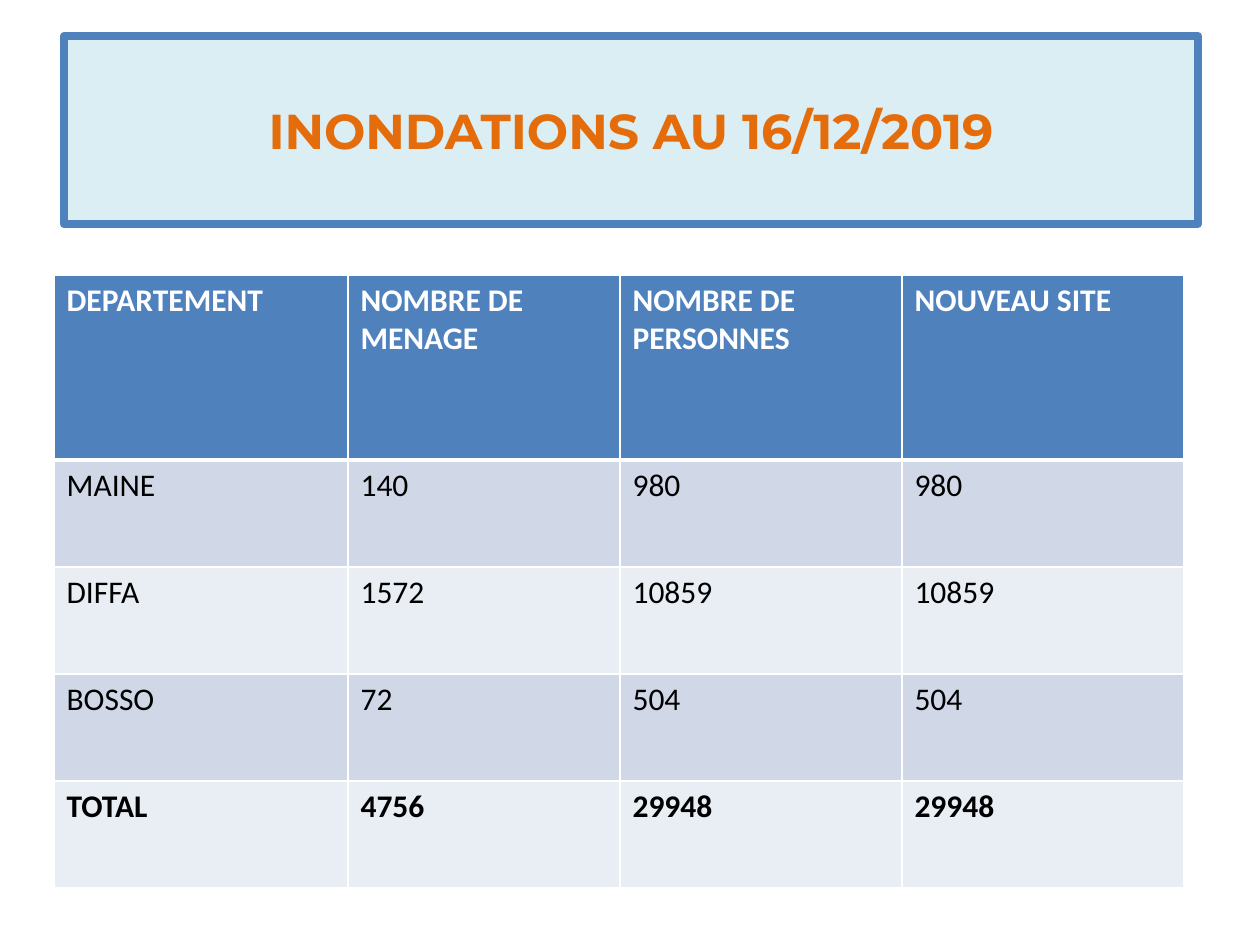
from dataclasses import dataclass

from lxml.etree import SubElement
from pptx import Presentation
from pptx.dml.color import RGBColor as RGB
from pptx.enum.text import MSO_ANCHOR as Anchor, PP_ALIGN as Align
from pptx.oxml.ns import qn
from pptx.util import Emu, Pt

PX_PER_INCH = 126


@dataclass(frozen=True)
class Theme:
    blue: str = "4F81BD"
    pale_blue: str = "DBEEF4"
    orange: str = "E46C0A"
    white: str = "FFFFFF"
    black: str = "000000"
    bands: tuple[str, str] = ("D0D8E8", "E9EDF4")
    title_font: str = "Montserrat"
    body_font: str = "Calibri"
    title_size: int = 28
    body_size: int = 18
    frame_width: float = 4.5
    grid_width: int = 1
    header_rule: int = 3


@dataclass(frozen=True)
class RowStyle:
    fill: str
    color: str
    bold: bool
    top: int
    bottom: int


THEME = Theme()
COLUMNS = (294, 272, 282, 282)
HEADER_HEIGHT, ROW_HEIGHT = 185, 107
ROWS = (
    ("DEPARTEMENT", "NOMBRE DE MENAGE", "NOMBRE DE PERSONNES", "NOUVEAU SITE"),
    ("MAINE", "140", "980", "980"),
    ("DIFFA", "1572", "10859", "10859"),
    ("BOSSO", "72", "504", "504"),
    ("TOTAL", "4756", "29948", "29948"),
)


def px(n: int) -> Emu:
    return Emu(round(n * 914400 / PX_PER_INCH))


def add_run(p, text: str, font: str, size: int, color: str, bold: bool) -> None:
    r = p.add_run()
    r.text = text
    r.font.name = font
    r.font.size = Pt(size)
    r.font.bold = bold
    r.font.color.rgb = RGB.from_string(color)


def add_border(cell, side: str, width: int) -> None:
    ln = SubElement(cell._tc.get_or_add_tcPr(), qn(f"a:ln{side}"), w=str(Pt(width)))
    SubElement(SubElement(ln, qn("a:solidFill")), qn("a:srgbClr"), val=THEME.white)


def row_style(index: int) -> RowStyle:
    if index == 0:
        return RowStyle(THEME.blue, THEME.white, True, THEME.grid_width, THEME.header_rule)
    top = THEME.header_rule if index == 1 else THEME.grid_width
    is_total = index == len(ROWS) - 1
    return RowStyle(THEME.bands[(index - 1) % 2], THEME.black, is_total, top, THEME.grid_width)


def draw_cell(cell, text: str, style: RowStyle) -> None:
    # Borders must precede the fill in the cell properties
    widths = {"L": THEME.grid_width, "R": THEME.grid_width, "T": style.top, "B": style.bottom}
    for side, width in widths.items():
        add_border(cell, side, width)
    cell.fill.solid()
    cell.fill.fore_color.rgb = RGB.from_string(style.fill)
    add_run(cell.text_frame.paragraphs[0], text, THEME.body_font, THEME.body_size,
            style.color, style.bold)


def draw_title(s, text: str) -> None:
    sp = s.shapes.title
    sp.left, sp.top, sp.width, sp.height = px(64), px(36), px(1134), px(188)
    sp.fill.solid()
    sp.fill.fore_color.rgb = RGB.from_string(THEME.pale_blue)
    sp.line.color.rgb = RGB.from_string(THEME.blue)
    sp.line.width = Pt(THEME.frame_width)
    tf = sp.text_frame
    tf.vertical_anchor = Anchor.MIDDLE
    p = tf.paragraphs[0]
    p.alignment = Align.CENTER
    add_run(p, text, THEME.title_font, THEME.title_size, THEME.orange, True)


def draw_table(s) -> None:
    heights = (HEADER_HEIGHT,) + (ROW_HEIGHT,) * (len(ROWS) - 1)
    table = s.shapes.add_table(len(ROWS), len(COLUMNS), px(54), px(275),
                               px(sum(COLUMNS)), px(sum(heights))).table
    for column, width in zip(table.columns, COLUMNS):
        column.width = px(width)
    for i, (row, height, texts) in enumerate(zip(table.rows, heights, ROWS)):
        row.height = px(height)
        for cell, text in zip(row.cells, texts):
            draw_cell(cell, text, row_style(i))


def main() -> None:
    prs = Presentation()
    prs.slide_width, prs.slide_height = px(1260), px(945)
    s = prs.slides.add_slide(prs.slide_layouts[5])

    # Framed heading
    draw_title(s, "INONDATIONS AU 16/12/2019")

    # Flood figures by department
    draw_table(s)

    prs.save("out.pptx")


if __name__ == "__main__":
    main()
